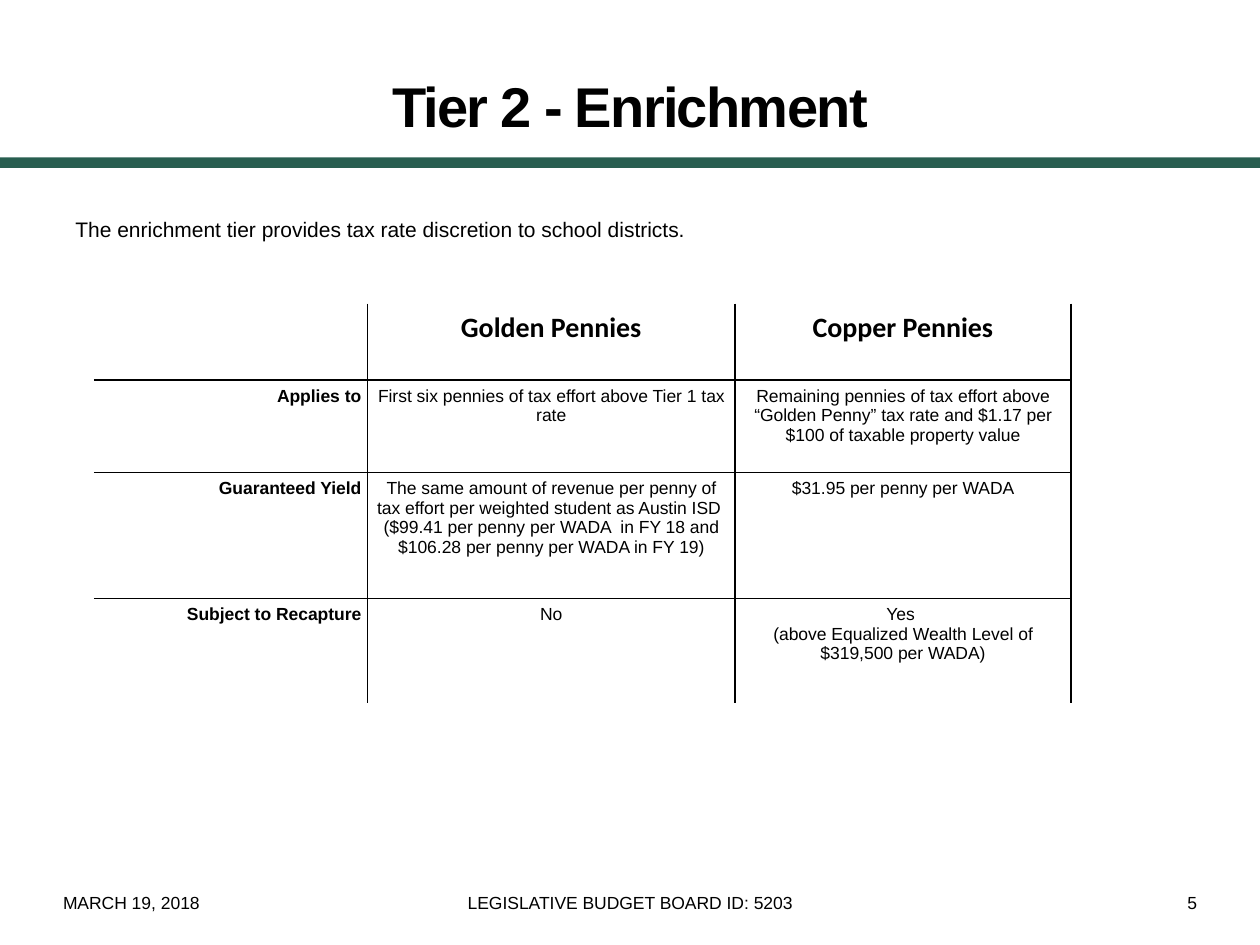
from lxml.etree import SubElement
from pptx import Presentation
from pptx.dml.color import RGBColor
from pptx.enum.shapes import MSO_SHAPE
from pptx.enum.text import MSO_ANCHOR, PP_ALIGN
from pptx.oxml.ns import qn
from pptx.util import Inches, Pt

BLACK, WHITE, GREEN = "000000", "FFFFFF", "285E50"
COLUMNS, ROWS = 120, 90
UNIT = Inches(10) / COLUMNS

TABLE_COLUMNS = (26, 35, 32)
TABLE_ROWS = (7.2, 8.8, 12, 10)
TABLE_TEXT = (
    ("", "Golden Pennies", "Copper Pennies"),
    ("Applies to",
     "First six pennies of tax effort above Tier 1 tax rate",
     "Remaining pennies of tax effort above “Golden Penny” tax rate "
     "and $1.17 per $100 of taxable property value"),
    ("Guaranteed Yield",
     "The same amount of revenue per penny of tax effort per weighted "
     "student as Austin ISD \n"
     "($99.41 per penny per WADA  in FY 18 and $106.28 per penny per WADA in FY 19)",
     "$31.95 per penny per WADA"),
    ("Subject to Recapture", "No",
     "Yes \n(above Equalized Wealth Level of $319,500 per WADA)"),
)


def color(value):
    """Turn a hex string into a colour."""
    return RGBColor.from_string(value)


def grid(*cells):
    """Convert grid units to slide lengths."""
    return [round(cell * UNIT) for cell in cells]


def style_text(frame, size, align, bold=False, font="Arial"):
    """Give every paragraph of a frame the same look."""
    for paragraph in frame.paragraphs:
        paragraph.alignment = align
        paragraph.font.name = font
        paragraph.font.size = Pt(size)
        paragraph.font.bold = bold
        paragraph.font.color.rgb = color(BLACK)


def set_margins(holder, margin):
    """Set four equal margins on a cell or text frame."""
    holder.margin_left = holder.margin_right = margin
    holder.margin_top = holder.margin_bottom = margin


def add_text(slide, box, wording, size, align, bold=False):
    """Add a wrapping text box and return its frame."""
    frame = slide.shapes.add_textbox(*grid(*box)).text_frame
    frame.word_wrap = True
    frame.text = wording
    style_text(frame, size, align, bold)
    return frame


def add_heading(slide, box):
    """Place the green rule and the tightly spaced title over it."""
    left, top, width, height = box
    rule = slide.shapes.add_shape(MSO_SHAPE.RECTANGLE, *grid(0, top + height - 2, COLUMNS, 1))
    rule.shadow.inherit = False
    rule.fill.solid()
    rule.fill.fore_color.rgb = color(GREEN)
    rule.line.fill.background()
    title = add_text(slide, box, "Tier 2 - Enrichment", 32, PP_ALIGN.CENTER, True)
    title.vertical_anchor = MSO_ANCHOR.MIDDLE
    title.paragraphs[0].runs[0].font._element.set("spc", "-100")


def add_border(cell, side, line_color):
    """Draw one one-point side of a table cell."""
    line = SubElement(cell._tc.get_or_add_tcPr(), qn(f"a:ln{side}"), w=str(Pt(1)))
    fill = SubElement(line, qn("a:solidFill"))
    SubElement(fill, qn("a:srgbClr"), val=line_color)


def style_cell(cell, row, column):
    """Set the borders, fill and text of a cell by its position."""
    last_row = row == len(TABLE_ROWS) - 1
    sides = {"L": column == 0, "R": False, "T": row == 0, "B": last_row}
    for side, is_open in sides.items():
        add_border(cell, side, WHITE if is_open else BLACK)
    cell.fill.solid()
    cell.fill.fore_color.rgb = color(WHITE)
    cell.text = TABLE_TEXT[row][column]
    if row == 0:
        style_text(cell.text_frame, 16, PP_ALIGN.CENTER, True, "Calibri")
    else:
        set_margins(cell, Inches(0.05))
        align = PP_ALIGN.CENTER if column else PP_ALIGN.RIGHT
        style_text(cell.text_frame, 10, align, column == 0)


def add_pennies_table(slide, left, top):
    """Place the comparison of golden and copper pennies."""
    box = grid(left, top, sum(TABLE_COLUMNS), sum(TABLE_ROWS))
    table = slide.shapes.add_table(len(TABLE_ROWS), len(TABLE_COLUMNS), *box).table
    table.first_row = table.horz_banding = False
    for column, width in zip(table.columns, grid(*TABLE_COLUMNS)):
        column.width = width
    for row, height in zip(table.rows, grid(*TABLE_ROWS)):
        row.height = height
    for row in range(len(TABLE_ROWS)):
        for column in range(len(TABLE_COLUMNS)):
            style_cell(table.cell(row, column), row, column)


def add_footer(slide, box):
    """Place the date, the document number and the page number."""
    left, top, width, height = box
    parts = (
        ("MARCH 19, 2018", 28, PP_ALIGN.LEFT),
        ("LEGISLATIVE BUDGET BOARD ID: 5203", 52, PP_ALIGN.CENTER),
        ("5", 28, PP_ALIGN.RIGHT),
    )
    for wording, share, align in parts:
        part_width = width * share / 108
        frame = add_text(slide, (left, top, part_width, height), wording, 10, align)
        set_margins(frame, 0)
        left += part_width


def main():
    """Build and save the slide."""
    deck = Presentation()
    deck.slide_width, deck.slide_height = grid(COLUMNS, ROWS)
    slide = deck.slides.add_slide(deck.slide_layouts[6])
    add_heading(slide, (6, 3, 108, 14))
    add_text(slide, (6, 20, 106, 5),
             "The enrichment tier provides tax rate discretion to school districts.",
             12, PP_ALIGN.LEFT)
    add_pennies_table(slide, 9, 29)
    add_footer(slide, (6, 85, 108, 5))
    deck.save("out.pptx")


if __name__ == "__main__":
    main()
